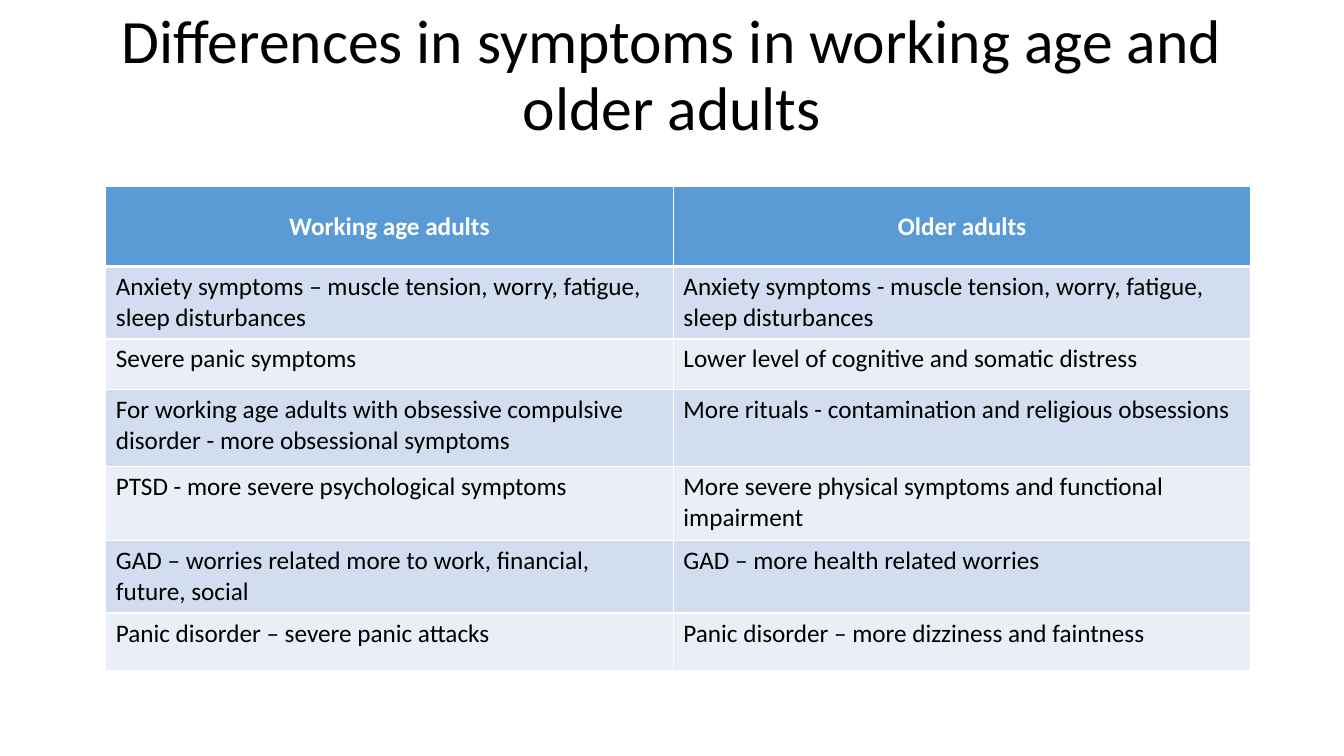
import pptx
import pptx.dml.color
import pptx.enum.text
import pptx.oxml.ns
import pptx.util
from lxml import etree

Pt = pptx.util.Pt
ALIGN = pptx.enum.text.PP_ALIGN
MIDDLE = pptx.enum.text.MSO_ANCHOR.MIDDLE
TOP = pptx.enum.text.MSO_ANCHOR.TOP

ROWS = [
    ("Working age adults", "Older adults"),
    ("Anxiety symptoms – muscle tension, worry, fatigue, sleep disturbances",
     "Anxiety symptoms - muscle tension, worry, fatigue, sleep disturbances"),
    ("Severe panic symptoms",
     "Lower level of cognitive and somatic distress"),
    ("For working age adults with obsessive compulsive disorder"
     " - more obsessional symptoms",
     "More rituals - contamination and religious obsessions"),
    ("PTSD - more severe psychological symptoms",
     "More severe physical symptoms and functional impairment"),
    ("GAD – worries related more to work, financial, future, social",
     "GAD – more health related worries"),
    ("Panic disorder – severe panic attacks",
     "Panic disorder – more dizziness and faintness"),
]
WIDTHS = [405.4, 412.6]
HEIGHTS = [56.9, 51.8, 36, 55.4, 52.6, 51.8, 41]


def tint(code):
    """Turn a hex string into a colour."""
    return pptx.dml.color.RGBColor.from_string(code)


def write(frame, text, size=18, font="Calibri", color="000000", bold=False,
          align=ALIGN.LEFT, anchor=TOP, space=1.0):
    """Put one formatted paragraph into a text frame."""
    frame.word_wrap = True
    frame.vertical_anchor = anchor
    para = frame.paragraphs[0]
    para.alignment = align
    para.line_spacing = space
    run = para.add_run()
    run.text = text
    run.font.size = Pt(size)
    run.font.name = font
    run.font.bold = bold
    run.font.color.rgb = tint(color)


def edge(cell, side, width, color="FFFFFF"):
    """Draw one border of a cell; call before filling the cell."""
    name = pptx.oxml.ns.qn
    props = cell._tc.get_or_add_tcPr()
    line = etree.SubElement(props, name(f"a:ln{side}"), w=str(Pt(width)))
    fill = etree.SubElement(line, name("a:solidFill"))
    etree.SubElement(fill, name("a:srgbClr"), val=color)


class Deck:
    head = "5B9BD5"
    bands = ("EAEFF7", "D2DEEF")

    def __init__(self, width, height):
        self.file = pptx.Presentation()
        self.file.slide_width = Pt(width)
        self.file.slide_height = Pt(height)
        self.slide = self.file.slides.add_slide(self.file.slide_layouts[6])

    def title(self, text, left, top, width, height):
        box = self.slide.shapes.add_textbox(
            Pt(left), Pt(top), Pt(width), Pt(height))
        write(box.text_frame, text, size=44, align=ALIGN.CENTER,
              anchor=MIDDLE, space=0.9)

    def table(self, rows, left, top, widths, heights):
        grid = self.slide.shapes.add_table(
            len(rows), len(widths), Pt(left), Pt(top),
            Pt(sum(widths)), Pt(sum(heights))).table
        for col, width in zip(grid.columns, widths):
            col.width = Pt(width)
        for r, texts in enumerate(rows):
            grid.rows[r].height = Pt(heights[r])
            for c, text in enumerate(texts):
                self.cell(grid.cell(r, c), text, r)

    def cell(self, cell, text, row):
        first = row == 0
        # The rule under the header is shared with the first body row.
        wide = {"B": 3} if first else {"T": 3} if row == 1 else {}
        for side in "LRTB":
            edge(cell, side, wide.get(side, 1))
        cell.fill.solid()
        cell.fill.fore_color.rgb = tint(
            self.head if first else self.bands[row % 2])
        if first:
            write(cell.text_frame, text, color="FFFFFF", bold=True,
                  align=ALIGN.CENTER)
            cell.vertical_anchor = MIDDLE
        else:
            write(cell.text_frame, text)


def main():
    deck = Deck(960, 540)
    deck.title("Differences in symptoms in working age and older adults",
               66, 0, 828, 110)
    deck.table(ROWS, 75.6, 133.4, WIDTHS, HEIGHTS)
    deck.file.save("out.pptx")


if __name__ == "__main__":
    main()
